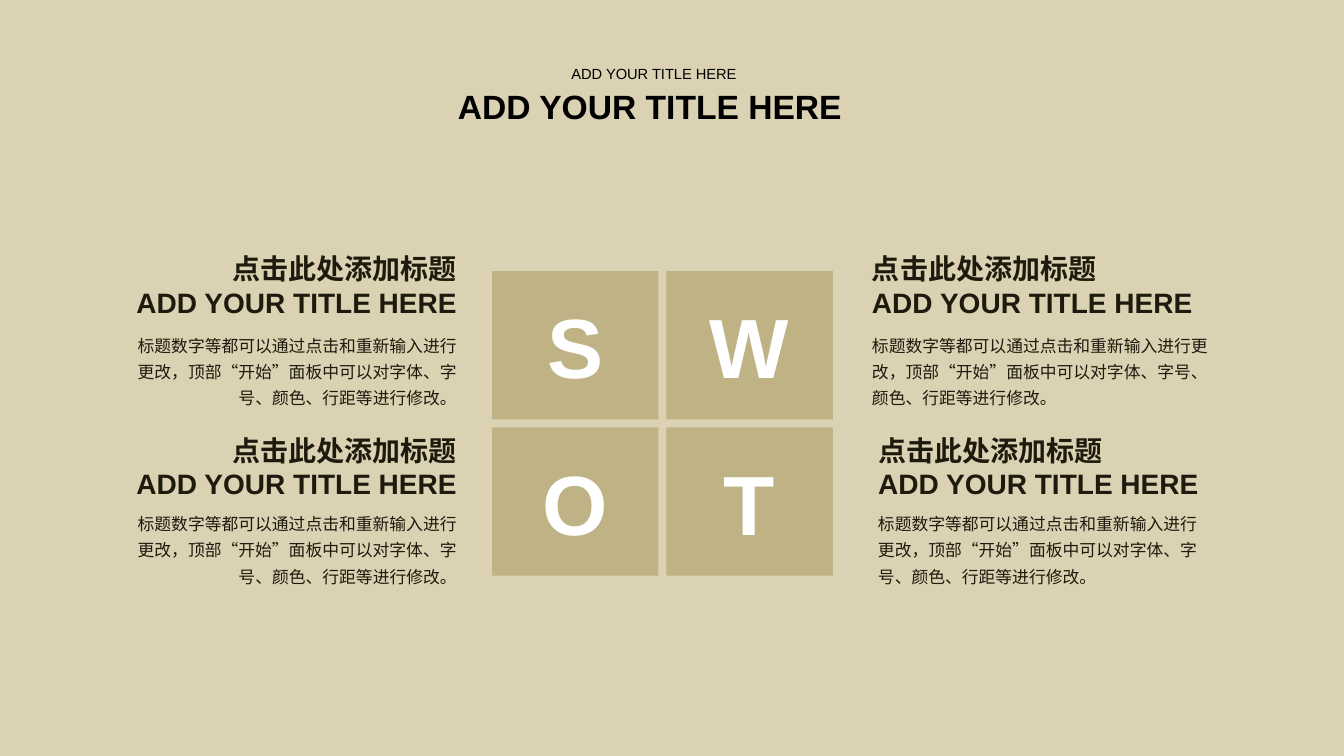
"""Build a SWOT slide: a two by two letter grid with a titled note beside each cell."""
from lxml import etree
from pptx import Presentation
from pptx import util as u
from pptx.dml.color import RGBColor
from pptx.enum import lang, shapes, text
from pptx.oxml.ns import qn

THEME = {
    "font": "Arial",
    "back": "DBD1B3", "tile": "968440", "ink": "1E1A0D", "black": "000000", "white": "FFFFFF",
    "title": 24, "kicker": 10.5, "letter": 60, "heading": 20, "body": 12,
}
TITLE = "ADD YOUR TITLE HERE"
HEADING = ["点击此处添加标题", TITLE]
BODY = ["标题数字等都可以通过点击和重新输入进行更改，顶部“开始”面板中可以对字体、字号、颜色、行距等进行修改。"]
LEFT, RIGHT, CENTER = text.PP_ALIGN.LEFT, text.PP_ALIGN.RIGHT, text.PP_ALIGN.CENTER
TOP, MIDDLE = text.MSO_ANCHOR.TOP, text.MSO_ANCHOR.MIDDLE
FIXED, GROW = text.MSO_AUTO_SIZE.NONE, text.MSO_AUTO_SIZE.SHAPE_TO_FIT_TEXT


def write(sp, lines, size, color, bold=False, align=LEFT, spacing=None, anchor=TOP, fit=FIXED):
    tf = sp.text_frame
    frame = {"word_wrap": True, "auto_size": fit, "vertical_anchor": anchor}
    for name, value in frame.items():
        setattr(tf, name, value)
    for i, line in enumerate(lines):
        p = tf.paragraphs[0] if i == 0 else tf.add_paragraph()
        for name, value in {"alignment": align, "line_spacing": spacing, "space_before": u.Pt(0)}.items():
            setattr(p, name, value)
        r = p.add_run()
        r.text = line
        language = lang.MSO_LANGUAGE_ID.ENGLISH_US if line.isascii() else lang.MSO_LANGUAGE_ID.SIMPLIFIED_CHINESE
        font = {"name": THEME["font"], "size": u.Pt(THEME[size]), "bold": bold, "language_id": language}
        for name, value in font.items():
            setattr(r.font, name, value)
        r.font.color.rgb = RGBColor.from_string(THEME[color])


def inches(*lengths):
    return [u.Inches(n) for n in lengths]


prs = Presentation()
prs.slide_width, prs.slide_height = inches(13.33, 7.5)
s = prs.slides.add_slide(prs.slide_layouts[5])
s.background.fill.solid()
s.background.fill.fore_color.rgb = RGBColor.from_string(THEME["back"])

title = s.shapes.title
title.left, title.top, title.width, title.height = inches(4.44, 0.85, 4.07, 0.43)
write(title, [TITLE], "title", "black", bold=True, spacing=0.9)
kicker = s.shapes.add_textbox(*inches(5.57, 0.61, 1.86, 0.18))
write(kicker, [TITLE], "kicker", "black", spacing=0.9)

GRID_X, GRID_Y, TILE_W, TILE_H, GAP = 4.88, 2.69, 1.65, 1.47, 0.08
for i, letter in enumerate("SWOT"):
    row, col = divmod(i, 2)
    x, y = GRID_X + col * (TILE_W + GAP), GRID_Y + row * (TILE_H + GAP)
    sp = s.shapes.add_shape(shapes.MSO_SHAPE.RECTANGLE, *inches(x, y, TILE_W, TILE_H))
    sp.shadow.inherit = False
    sp.line.fill.background()
    sp.fill.solid()
    sp.fill.fore_color.rgb = RGBColor.from_string(THEME["tile"])
    tint = sp.fill._xPr.find(qn("a:solidFill"))[0]
    etree.SubElement(tint, qn("a:alpha")).set("val", "40000")
    write(sp, [letter], "letter", "white", bold=True, align=CENTER, anchor=MIDDLE)

HEADING_W, HEADING_H, BODY_H, NOTE_RIGHT = 3.92, 1.11, 0.89, 4.63
ROWS = [(2.45, 3.22), (4.25, 4.99)]
RIGHT_NOTES = [(8.55, 3.61), (8.61, 3.47)]
LEFT_BODY_W = 3.45
for (heading_y, body_y), (right_x, right_w) in zip(ROWS, RIGHT_NOTES):
    sides = [
        (right_x, right_x, right_w, LEFT),
        (NOTE_RIGHT - HEADING_W, NOTE_RIGHT - LEFT_BODY_W, LEFT_BODY_W, RIGHT),
    ]
    for heading_x, body_x, body_w, align in sides:
        body = s.shapes.add_textbox(*inches(body_x, body_y, body_w, BODY_H))
        write(body, BODY, "body", "ink", align=align, spacing=1.3, fit=GROW)
        heading = s.shapes.add_textbox(*inches(heading_x, heading_y, HEADING_W, HEADING_H))
        write(heading, HEADING, "heading", "ink", bold=True, align=align, fit=GROW)

prs.save("out.pptx")
